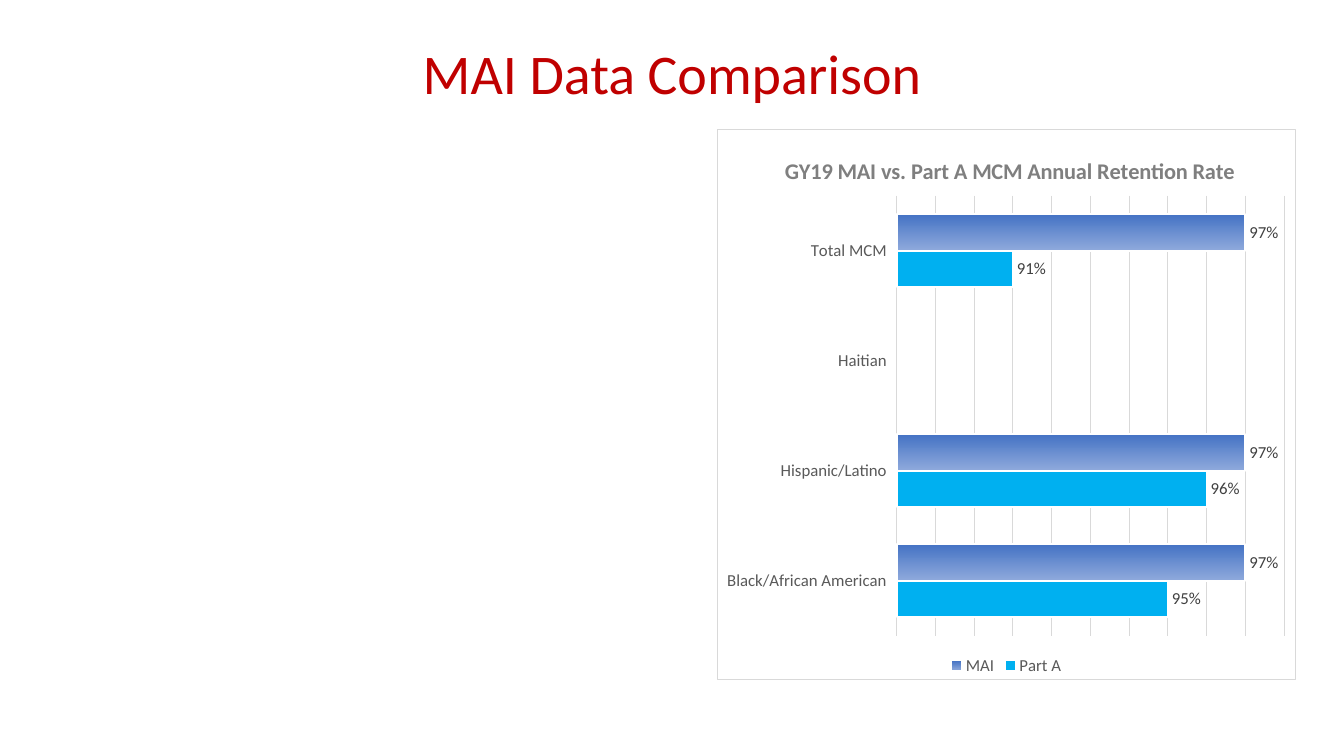
"""Build the MAI data comparison slide with its retention rate chart."""
from dataclasses import dataclass
from typing import Optional

from lxml import etree
from pptx import Presentation
from pptx.chart.chart import Chart
from pptx.chart.data import CategoryChartData
from pptx.chart.series import BarSeries
from pptx.dml.color import RGBColor
from pptx.dml.line import LineFormat
from pptx.enum.chart import XL_CHART_TYPE, XL_LABEL_POSITION, XL_LEGEND_POSITION, XL_TICK_MARK
from pptx.enum.text import MSO_ANCHOR, PP_ALIGN
from pptx.oxml import parse_xml
from pptx.oxml.ns import nsdecls, qn
from pptx.slide import Slide
from pptx.text.text import Font
from pptx.util import Pt

BAR_CLUSTERED = XL_CHART_TYPE.BAR_CLUSTERED
OUTSIDE_END = XL_LABEL_POSITION.OUTSIDE_END
LEGEND_BOTTOM = XL_LEGEND_POSITION.BOTTOM
TICK_OUTSIDE = XL_TICK_MARK.OUTSIDE
TICK_NONE = XL_TICK_MARK.NONE
MIDDLE = MSO_ANCHOR.MIDDLE
CENTER = PP_ALIGN.CENTER
TITLE_ONLY = 5
PERCENT = "0%"


@dataclass(frozen=True)
class Theme:
    font: str = "Calibri"
    heading: str = "C00000"
    chart_heading: str = "7F7F7F"
    axis_text: str = "595959"
    label_text: str = "404040"
    rule: str = "D9D9D9"
    background: str = "FFFFFF"
    heading_size: float = 40
    chart_heading_size: float = 16
    label_size: float = 12
    rule_width: float = 0.75
    bar_outline_width: float = 1.5


@dataclass(frozen=True)
class RateSeries:
    name: str
    rates: tuple[Optional[float], ...]
    colors: tuple[str, ...]


THEME = Theme()
CATEGORIES = ("Black/African American", "Hispanic/Latino", "Haitian", "Total MCM")
RATE_SERIES = (
    RateSeries("Part A", (0.95, 0.96, None, 0.91), ("00B0F0",)),
    RateSeries("MAI", (0.97, 0.97, None, 0.97), ("4472C4", "8FAADC")),
)


def style_font(font: Font, size: float, color: str, bold: bool = False) -> None:
    font.name = THEME.font
    font.size = Pt(size)
    font.bold = bold
    font.color.rgb = RGBColor.from_string(color)


def style_line(line: LineFormat, color: str, width: float) -> None:
    line.color.rgb = RGBColor.from_string(color)
    line.width = Pt(width)


def set_layout(parent: etree._Element, position: int, **fractions: float) -> None:
    """Place a chart part at fractions of the chart area."""
    for layout in parent.findall(qn("c:layout")):
        parent.remove(layout)
    target = '<c:layoutTarget val="inner"/>' if "w" in fractions else ""
    modes = "".join(f'<c:{key}Mode val="edge"/>' for key in ("x", "y"))
    values = "".join(f'<c:{key} val="{value}"/>' for key, value in fractions.items())
    parent.insert(position, parse_xml(
        f'<c:layout {nsdecls("c")}><c:manualLayout>{target}{modes}{values}'
        "</c:manualLayout></c:layout>"))


def frame_chart(chart: Chart) -> None:
    """Give the chart area its fill and border."""
    chart.element.find(qn("c:chart")).addnext(parse_xml(
        f'<c:spPr {nsdecls("c", "a")}>'
        f'<a:solidFill><a:srgbClr val="{THEME.background}"/></a:solidFill>'
        f'<a:ln w="{Pt(THEME.rule_width)}"><a:solidFill><a:srgbClr val="{THEME.rule}"/>'
        "</a:solidFill></a:ln></c:spPr>"))


def style_series(series: BarSeries, colors: tuple[str, ...]) -> None:
    fill = series.format.fill
    if len(colors) == 1:
        fill.solid()
        fill.fore_color.rgb = RGBColor.from_string(colors[0])
    else:
        fill.gradient()
        fill.gradient_angle = 270
        for stop, color in zip(fill.gradient_stops, colors):
            stop.color.rgb = RGBColor.from_string(color)
    style_line(series.format.line, THEME.background, THEME.bar_outline_width)
    series.invert_if_negative = False
    labels = series.data_labels
    labels.show_value = True
    labels.number_format = PERCENT
    labels.number_format_is_linked = False
    labels.position = OUTSIDE_END
    style_font(labels.font, THEME.label_size, THEME.label_text)


def style_axes(chart: Chart) -> None:
    category_axis = chart.category_axis
    category_axis.major_tick_mark = TICK_OUTSIDE
    category_axis.minor_tick_mark = TICK_NONE
    category_axis.format.line.fill.background()
    style_font(category_axis.tick_labels.font, THEME.label_size, THEME.axis_text)
    value_axis = chart.value_axis
    value_axis.minimum_scale = 0.88
    value_axis.maximum_scale = 0.98
    value_axis.major_unit = 0.01
    value_axis.has_major_gridlines = True
    style_line(value_axis.major_gridlines.format.line, THEME.rule, THEME.rule_width)
    value_axis.tick_labels.number_format = PERCENT
    value_axis.tick_labels.number_format_is_linked = False
    value_axis.visible = False


def add_title(slide: Slide, text: str) -> None:
    title = slide.shapes.title
    title.left, title.top, title.width, title.height = Pt(66), Pt(28.8), Pt(828), Pt(51.84)
    title.text_frame.vertical_anchor = MIDDLE
    paragraph = title.text_frame.paragraphs[0]
    paragraph.alignment = CENTER
    paragraph.line_spacing = 0.9
    run = paragraph.add_run()
    run.text = text
    style_font(run.font, THEME.heading_size, THEME.heading)


def add_retention_chart(slide: Slide) -> None:
    data = CategoryChartData(number_format=PERCENT)
    data.categories = CATEGORIES
    for item in RATE_SERIES:
        data.add_series(item.name, item.rates)
    chart = slide.shapes.add_chart(
        BAR_CLUSTERED, Pt(512), Pt(92.2), Pt(414), Pt(393.8), data).chart
    style_font(chart.font, 10, "000000")
    frame_chart(chart)

    chart.has_title = True
    run = chart.chart_title.text_frame.paragraphs[0].add_run()
    run.text = "GY19 MAI vs. Part A MCM Annual Retention Rate"
    style_font(run.font, THEME.chart_heading_size, THEME.chart_heading, bold=True)
    set_layout(chart.chart_title.element, 1, x=0.11, y=0.04)
    set_layout(chart.element.find(".//" + qn("c:plotArea")), 0, x=0.31, y=0.12, w=0.67, h=0.8)

    chart.has_legend = True
    chart.legend.position = LEGEND_BOTTOM
    chart.legend.include_in_layout = False
    style_font(chart.legend.font, THEME.label_size, THEME.axis_text)

    plot = chart.plots[0]
    plot.gap_width = 100
    plot.vary_by_categories = False
    for series, item in zip(plot.series, RATE_SERIES):
        style_series(series, item.colors)
    style_axes(chart)


def main() -> None:
    presentation = Presentation()
    presentation.slide_width = Pt(960)
    presentation.slide_height = Pt(540)
    slide = presentation.slides.add_slide(presentation.slide_layouts[TITLE_ONLY])
    add_title(slide, "MAI Data Comparison")
    add_retention_chart(slide)
    presentation.save("out.pptx")


if __name__ == "__main__":
    main()
